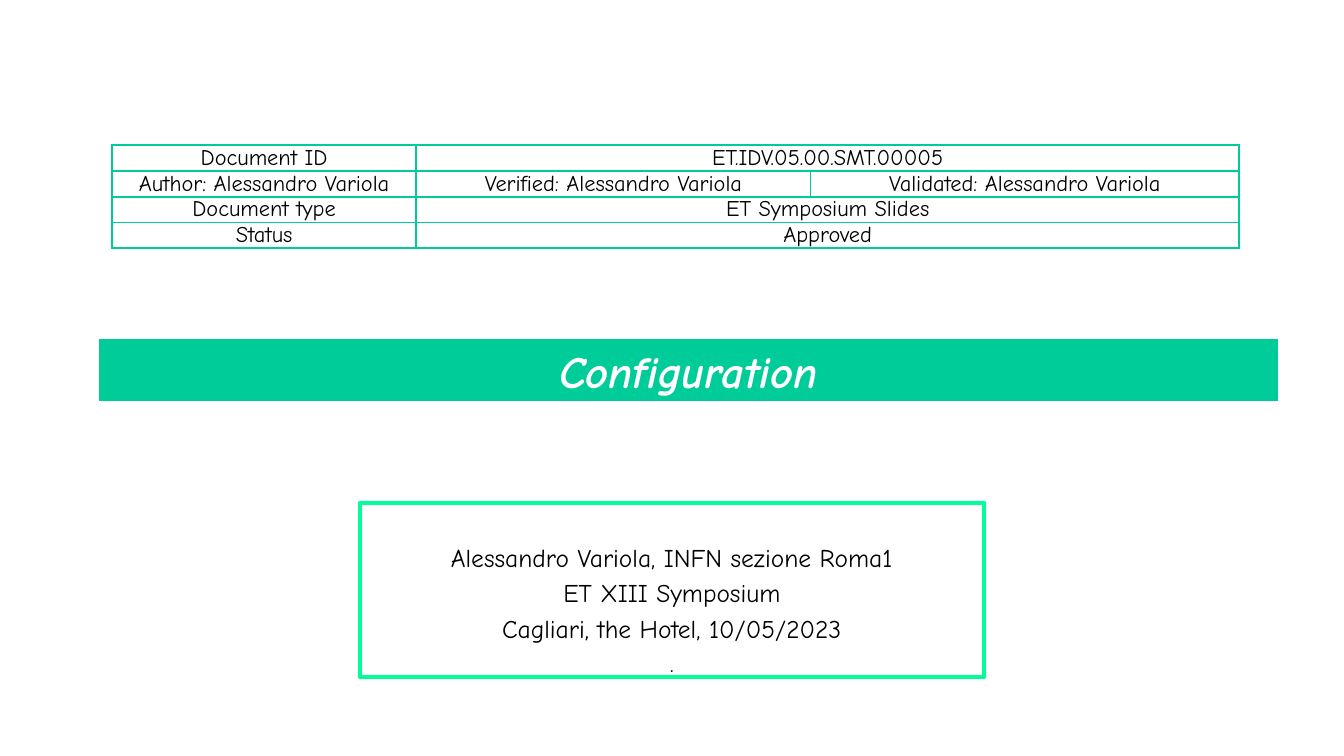
from lxml import etree
from pptx import Presentation
from pptx.dml.color import RGBColor
from pptx.enum.shapes import MSO_SHAPE
from pptx.enum.text import MSO_ANCHOR, PP_ALIGN
from pptx.oxml.ns import qn
from pptx.util import Inches, Pt

RECTANGLE = MSO_SHAPE.RECTANGLE
CENTER = PP_ALIGN.CENTER
TOP, MIDDLE, BOTTOM = MSO_ANCHOR.TOP, MSO_ANCHOR.MIDDLE, MSO_ANCHOR.BOTTOM


def color(value):
    return RGBColor.from_string(value)


class CoverPage:
    font = "Comic Neue"
    green = "00CC99"
    bright_green = "00FF99"
    white = "FFFFFF"
    black = "000000"

    def __init__(self, deck):
        self.page = deck.slides.add_slide(deck.slide_layouts[6])

    def style(self, para, size, ink, bold=False, italic=False):
        para.alignment = CENTER
        para.font.name = self.font
        para.font.size = Pt(size)
        para.font.color.rgb = color(ink)
        para.font.bold = bold
        para.font.italic = italic

    def frame(self, left, top, width, height, outline, anchor, fill=None):
        box = self.page.shapes.add_shape(
            RECTANGLE, Inches(left), Inches(top), Inches(width), Inches(height))
        box.shadow.inherit = False
        if fill:
            box.fill.solid()
            box.fill.fore_color.rgb = color(fill)
        else:
            box.fill.background()
        box.line.color.rgb = color(outline)
        box.line.width = Pt(3)
        box.text_frame.word_wrap = True
        box.text_frame.vertical_anchor = anchor
        return box.text_frame

    def title(self, text):
        text_frame = self.frame(0.96, 3.34, 11.74, 0.66, self.white, BOTTOM, self.green)
        para = text_frame.paragraphs[0]
        para.text = text
        para.line_spacing = 0.9
        self.style(para, 32, self.white, bold=True, italic=True)

    def event(self, lines):
        text_frame = self.frame(3.57, 4.99, 6.19, 1.73, self.bright_green, TOP)
        text_frame.margin_top = Inches(0.47)
        for index, (text, size) in enumerate(lines):
            para = text_frame.add_paragraph() if index else text_frame.paragraphs[0]
            para.text = text
            para.line_spacing = 0.7
            if index:
                para.space_before = Pt(10)
            self.style(para, size, self.black)

    def borders(self, cell):
        properties = cell._tc.get_or_add_tcPr()
        for index, side in enumerate(("a:lnL", "a:lnR", "a:lnT", "a:lnB")):
            line = etree.Element(qn(side), w=str(Pt(1.5)))
            fill = etree.SubElement(line, qn("a:solidFill"))
            etree.SubElement(fill, qn("a:srgbClr"), val=self.green)
            properties.insert(index, line)

    def document_table(self, rows, widths):
        row_height = 0.25
        table = self.page.shapes.add_table(
            len(rows), len(widths), Inches(1.11), Inches(1.44),
            Inches(sum(widths)), Inches(row_height * len(rows))).table
        table.first_row = False
        table.horz_banding = False
        for column, width in zip(table.columns, widths):
            column.width = Inches(width)
        for row_index, texts in enumerate(rows):
            table.rows[row_index].height = Inches(row_height)
            if len(texts) < len(widths):
                table.cell(row_index, 1).merge(table.cell(row_index, 2))
            for column_index in range(len(widths)):
                cell = table.cell(row_index, column_index)
                cell.fill.background()
                cell.vertical_anchor = MIDDLE
                cell.margin_left = cell.margin_right = Inches(0.07)
                cell.margin_top = cell.margin_bottom = 0
                self.borders(cell)
                para = cell.text_frame.paragraphs[0]
                if column_index < len(texts):
                    para.text = texts[column_index]
                self.style(para, 16, self.black)


def main():
    deck = Presentation()
    deck.slide_width = Inches(13.33)
    deck.slide_height = Inches(7.5)
    cover = CoverPage(deck)
    cover.title("Configuration")
    cover.event([
        ("Alessandro Variola, INFN sezione Roma1", 18.2),
        ("ET XIII Symposium", 18.2),
        ("Cagliari, the Hotel, 10/05/2023", 18.2),
        (".", 16.8),
    ])
    cover.document_table([
        ("Document ID", "ET.IDV.05.00.SMT.00005"),
        ("Author: Alessandro Variola", "Verified: Alessandro Variola",
         "Validated: Alessandro Variola"),
        ("Document type", "ET Symposium Slides"),
        ("Status", "Approved"),
    ], (3.02, 3.91, 4.25))
    deck.save("out.pptx")


if __name__ == "__main__":
    main()
